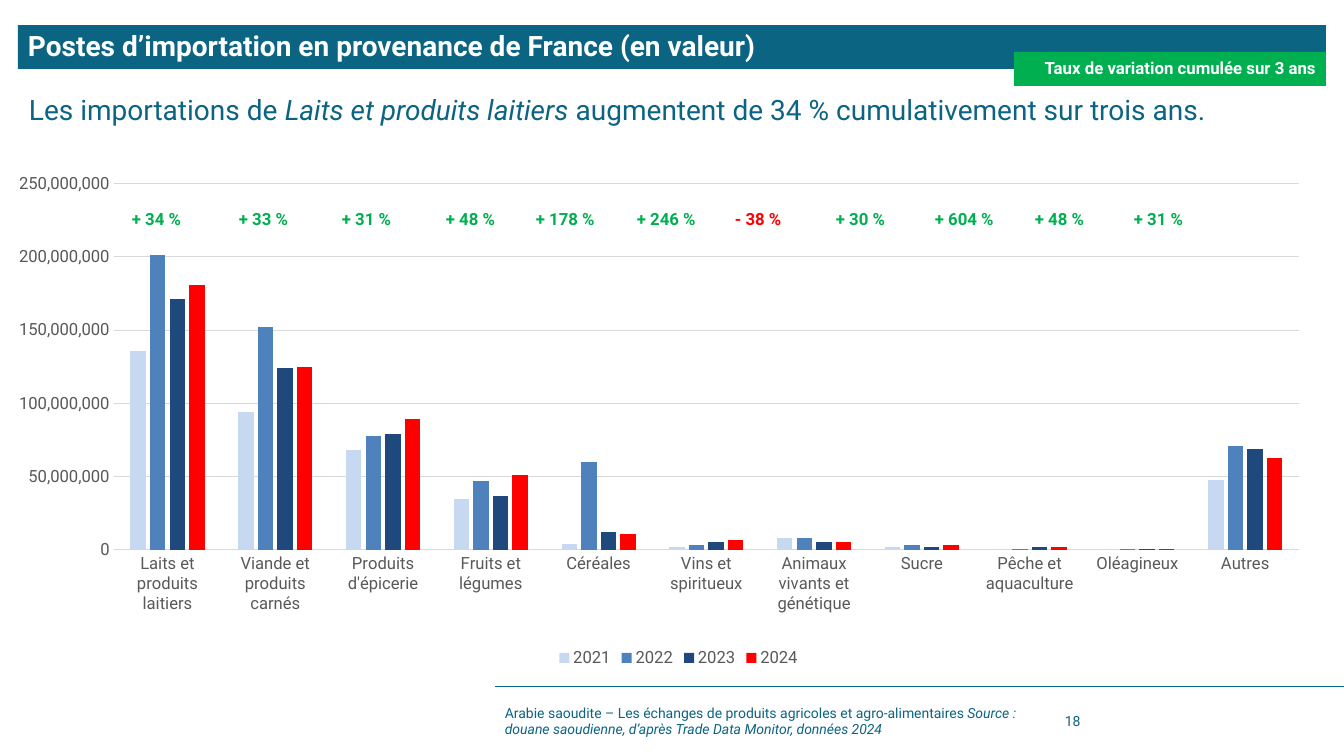
from lxml import etree
from pptx import Presentation
from pptx.chart.data import CategoryChartData
from pptx.dml.color import RGBColor
from pptx.enum.chart import XL_CHART_TYPE, XL_LEGEND_POSITION, XL_TICK_MARK
from pptx.enum.shapes import MSO_CONNECTOR, MSO_SHAPE
from pptx.enum.text import MSO_ANCHOR, PP_ALIGN
from pptx.oxml.ns import qn
from pptx.util import Pt

CLUSTERED = XL_CHART_TYPE.COLUMN_CLUSTERED
BOTTOM = XL_LEGEND_POSITION.BOTTOM
NO_TICK = XL_TICK_MARK.NONE
RECTANGLE = MSO_SHAPE.RECTANGLE
STRAIGHT = MSO_CONNECTOR.STRAIGHT
TOP, MIDDLE = MSO_ANCHOR.TOP, MSO_ANCHOR.MIDDLE
LEFT, RIGHT = PP_ALIGN.LEFT, PP_ALIGN.RIGHT

EMU_PER_PX = 914400 / 100.8
FONT = "Roboto"
TEAL, GREEN, RED, WHITE = "0B6482", "00B050", "FF0000", "FFFFFF"
GRID, LABEL = "D9D9D9", "595959"
MILLION = 1000000

CATEGORIES = [
    "Laits et produits laitiers", "Viande et produits carnés", "Produits d'épicerie",
    "Fruits et légumes", "Céréales", "Vins et spiritueux", "Animaux vivants et génétique",
    "Sucre", "Pêche et aquaculture", "Oléagineux", "Autres",
]
IMPORTS = [
    ("2021", "C6D9F1", [136, 94, 68, 35, 4, 2, 8, 2, 0, 0, 48]),
    ("2022", "4F81BD", [201, 152, 78, 47, 60, 3, 8, 3, 0.4, 0.3, 71]),
    ("2023", "1F497D", [171, 124, 79, 37, 12, 5, 5, 2, 2, 0.3, 69]),
    ("2024", RED, [181, 125, 89, 51, 11, 7, 5, 3, 2, 0.3, 63]),
]
RATES = ["+ 34 %", "+ 33 %", "+ 31 %", "+ 48 %", "+ 178 %", "+ 246 %",
         "- 38 %", "+ 30 %", "+ 604 %", "+ 48 %", "+ 31 %"]
RATE_STOPS = [107, 210, 314, 404, 505, 603, 704, 803, 903, 1002]
PLOT = {"x": 0.063, "y": 0.052, "w": 0.917, "h": 0.711}


def px(length):
    """Turn pixels into EMU."""
    return round(length * EMU_PER_PX)


def rgb(color):
    """Turn a hex string into a colour."""
    return RGBColor.from_string(color)


def style_font(font, size, color, bold=None, italic=None):
    """Set the slide's typeface with a size, colour and style."""
    font.name, font.size = FONT, Pt(size)
    font.bold, font.italic = bold, italic
    font.color.rgb = rgb(color)


def write(shape, runs, size, anchor=TOP, align=LEFT, spacing=None):
    """Fill a shape with one paragraph of (text, colour, bold, italic) runs."""
    frame = shape.text_frame
    frame.word_wrap = True
    frame.vertical_anchor = anchor
    paragraph = frame.paragraphs[0]
    paragraph.alignment = align
    paragraph.line_spacing = spacing
    for text, color, bold, italic in runs:
        run = paragraph.add_run()
        run.text = text
        style_font(run.font, size, color, bold, italic)
    return paragraph


def add_text(slide, box, runs, size, **layout):
    """Add a text box and return its paragraph."""
    return write(slide.shapes.add_textbox(*map(px, box)), runs, size, **layout)


def add_banner(slide, box, fill, text, size, align=LEFT):
    """Add a filled rectangle with bold white text."""
    banner = slide.shapes.add_shape(RECTANGLE, *map(px, box))
    banner.shadow.inherit = False
    banner.fill.solid()
    banner.fill.fore_color.rgb = rgb(fill)
    banner.line.fill.background()
    write(banner, [(text, WHITE, True, False)], size, anchor=MIDDLE, align=align, spacing=0.9)


def add_rule(slide, start, end):
    """Add the thin footer rule."""
    rule = slide.shapes.add_connector(STRAIGHT, *map(px, start + end))
    rule.line.color.rgb = rgb(TEAL)
    rule.line.width = Pt(0.5)
    etree.SubElement(rule.line._get_or_add_ln().getparent(), qn("a:effectLst"))


def add_rates(slide, box):
    """Add the row of variation rates, aligned on tab stops."""
    runs = [("\t" * (index > 0) + rate, RED if rate.startswith("-") else GREEN, True, False)
            for index, rate in enumerate(RATES)]
    paragraph = add_text(slide, box, runs, 12)
    stops = etree.SubElement(paragraph._p.get_or_add_pPr(), qn("a:tabLst"))
    for stop in RATE_STOPS:
        etree.SubElement(stops, qn("a:tab"), pos=str(px(stop)), algn="l")


def place_plot(chart):
    """Fix the inner plot area as fractions of the chart."""
    plot_area = chart._chartSpace.chart.plotArea
    for previous in plot_area.findall(qn("c:layout")):
        plot_area.remove(previous)
    layout = etree.Element(qn("c:layout"))
    plot_area.insert(0, layout)
    manual = etree.SubElement(layout, qn("c:manualLayout"))
    settings = [("layoutTarget", "inner"), ("xMode", "edge"), ("yMode", "edge")]
    for tag, value in settings + list(PLOT.items()):
        etree.SubElement(manual, qn("c:" + tag), val=str(value))


def style_line(line):
    """Give a chart line the light grid look."""
    line.color.rgb = rgb(GRID)
    line.width = Pt(0.75)


def add_imports_chart(slide, box):
    """Add the clustered columns of imports by category and year."""
    data = CategoryChartData(number_format="#,##0")
    data.categories = CATEGORIES
    for year, _, millions in IMPORTS:
        data.add_series(year, [round(value * MILLION) for value in millions])
    chart = slide.shapes.add_chart(CLUSTERED, *map(px, box), data).chart
    style_font(chart.font, 12, LABEL)
    chart.has_title = False
    chart.has_legend = True
    chart.legend.position = BOTTOM
    chart.legend.include_in_layout = False
    style_font(chart.legend.font, 12, LABEL)

    columns = chart.plots[0]
    columns.gap_width, columns.overlap = 219, -27
    columns.vary_by_categories = False
    for series, (_, color, _) in zip(columns.series, IMPORTS):
        series.format.fill.solid()
        series.format.fill.fore_color.rgb = rgb(color)

    for axis in (chart.category_axis, chart.value_axis):
        axis.major_tick_mark = axis.minor_tick_mark = NO_TICK
        style_font(axis.tick_labels.font, 12, LABEL)
    style_line(chart.category_axis.format.line)
    amounts = chart.value_axis
    amounts.minimum_scale, amounts.maximum_scale = 0, 250 * MILLION
    amounts.major_unit = 50 * MILLION
    amounts.tick_labels.number_format = "#,##0"
    amounts.tick_labels.number_format_is_linked = False
    amounts.format.line.fill.background()
    style_line(amounts.major_gridlines.format.line)
    place_plot(chart)


def main():
    """Build and save the slide."""
    presentation = Presentation()
    presentation.slide_width, presentation.slide_height = px(1344), px(756)
    slide = presentation.slides.add_slide(presentation.slide_layouts[6])

    add_rule(slide, (1344, 686), (495, 686))
    add_text(slide, (495, 701, 547, 40), [
        ("Arabie saoudite – Les échanges de produits agricoles et agro-alimentaires ",
         TEAL, False, False),
        ("Source : douane saoudienne, d’après Trade Data Monitor, données 2024",
         TEAL, False, True),
    ], 10, anchor=MIDDLE)
    add_text(slide, (1055, 701, 100, 40), [("18", TEAL, False, False)], 10, anchor=MIDDLE)

    add_banner(slide, (18, 25, 1308, 44), TEAL,
               "Postes d’importation en provenance de France (en valeur)", 20)
    add_text(slide, (19, 94, 1306, 39), [
        ("Les importations de ", TEAL, False, False),
        ("Laits et produits laitiers ", TEAL, False, True),
        ("augmentent de 34 % cumulativement sur trois ans.", TEAL, False, False),
    ], 20, spacing=0.8)
    add_banner(slide, (1014, 52, 312, 34), GREEN,
               "Taux de variation cumulée sur 3 ans", 12, align=RIGHT)

    add_imports_chart(slide, (19, 157, 1306, 515))
    add_rates(slide, (122, 204, 1193, 30))
    presentation.save("out.pptx")


if __name__ == "__main__":
    main()
